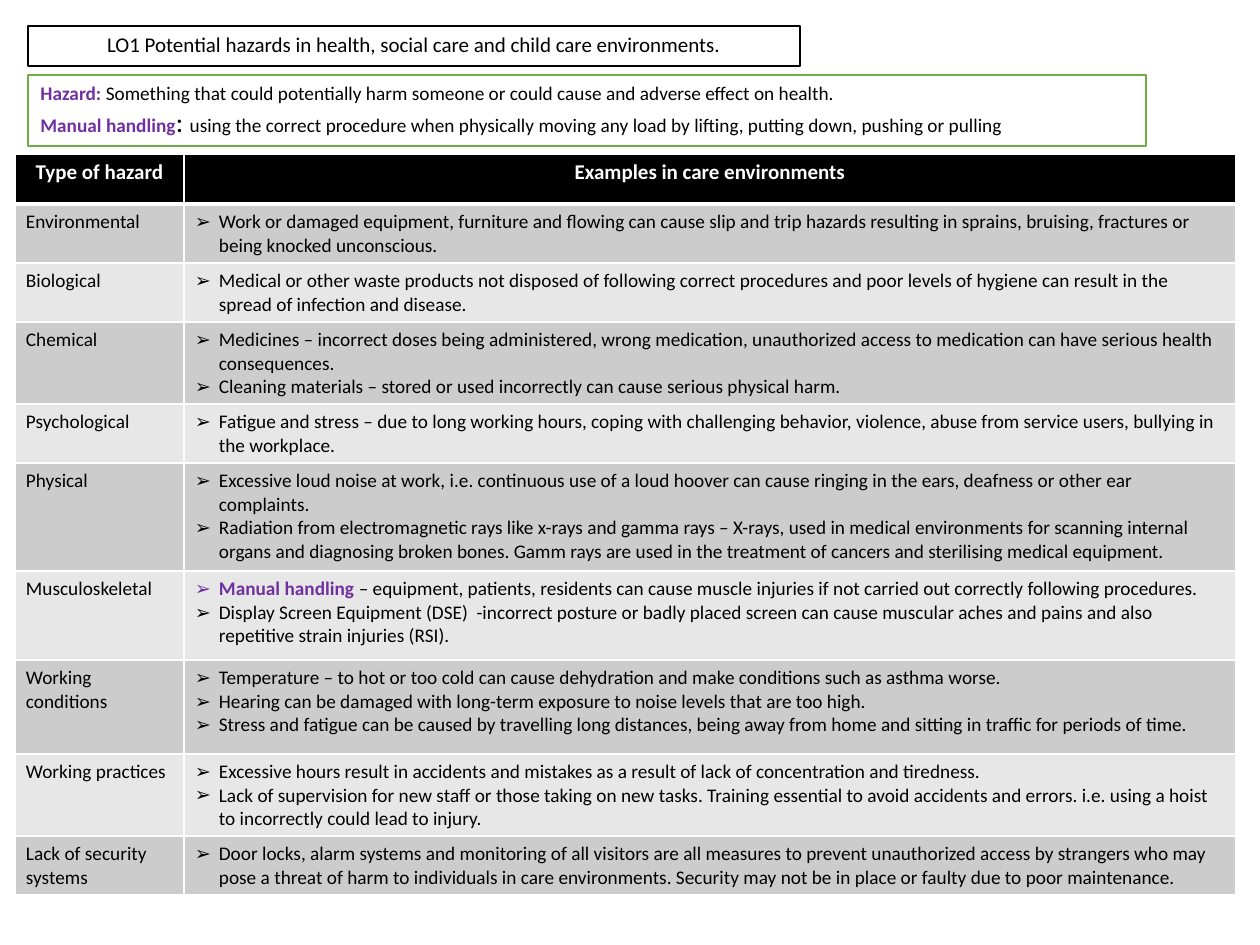
from lxml import etree
from pptx import Presentation
from pptx.dml.color import RGBColor
from pptx.enum.text import MSO_ANCHOR, MSO_AUTO_SIZE, PP_ALIGN
from pptx.oxml.ns import qn
from pptx.util import Pt

CENTER, LEFT = PP_ALIGN.CENTER, PP_ALIGN.LEFT
MIDDLE = MSO_ANCHOR.MIDDLE
NO_FIT, GROW = MSO_AUTO_SIZE.NONE, MSO_AUTO_SIZE.SHAPE_TO_FIT_TEXT

PX = 914400 / 126
FONT = "Calibri"
COLORS = {"black": "000000", "white": "FFFFFF", "purple": "7030A0",
          "green": "70AD47", "dark": "CCCCCC", "light": "E7E7E7"}

# Content: a paragraph is a list of (text, format) runs
BODY = {"size": 11, "color": "black", "bold": False}
KEY = {"size": 11, "color": "purple", "bold": True}
COLON = {**BODY, "size": 16}
TITLE = {**BODY, "size": 12}
HEAD = {"size": 12, "color": "white", "bold": True}

TITLE_TEXT = "LO1 Potential hazards in health, social care and child care environments."
DEFINITIONS = [
    [("Hazard: ", KEY),
     ("Something that could potentially harm someone or could cause and adverse effect on health.", BODY)],
    [("Manual handling", KEY), (": ", COLON),
     ("using the correct procedure when physically moving any load by lifting, putting down, pushing or pulling", BODY)],
]
HEADERS = ["Type of hazard", "Examples in care environments"]
# Hazard, row height, examples
HAZARDS = [
    ("Environmental", 59, [
        "Work or damaged equipment, furniture and flowing can cause slip and trip hazards resulting in sprains, bruising, fractures or being knocked unconscious."]),
    ("Biological", 59, [
        "Medical or other waste products not disposed of following correct procedures and poor levels of hygiene can result in the spread of infection and disease."]),
    ("Chemical", 82, [
        "Medicines – incorrect doses being administered, wrong medication, unauthorized access to medication can have serious health consequences.",
        "Cleaning materials – stored or used incorrectly can cause serious physical harm."]),
    ("Psychological", 59, [
        "Fatigue and stress – due to long working hours, coping with challenging behavior, violence, abuse from service users, bullying in the workplace."]),
    ("Physical", 108, [
        "Excessive loud noise at work, i.e. continuous use of a loud hoover can cause ringing in the ears, deafness or other ear complaints.",
        "Radiation from electromagnetic rays like x-rays and gamma rays – X-rays, used in medical environments for scanning internal organs and diagnosing broken bones. Gamm rays are used in the treatment of cancers and sterilising medical equipment."]),
    ("Musculoskeletal", 89, [
        [("Manual handling ", KEY),
         ("– equipment, patients, residents can cause muscle injuries if not carried out correctly following procedures.", BODY)],
        "Display Screen Equipment (DSE)  -incorrect posture or badly placed screen can cause muscular aches and pains and also repetitive strain injuries (RSI)."]),
    ("Working conditions", 94, [
        "Temperature – to hot or too cold can cause dehydration and make conditions such as asthma worse.",
        "Hearing can be damaged with long-term exposure to noise levels that are too high.",
        "Stress and fatigue can be caused by travelling long distances, being away from home and sitting in traffic for periods of time."]),
    ("Working practices", 82, [
        "Excessive hours result in accidents and mistakes as a result of lack of concentration and tiredness.",
        "Lack of supervision for new staff or those taking on new tasks. Training essential to avoid accidents and errors. i.e. using a hoist to incorrectly could lead to injury."]),
    ("Lack of security systems", 59, [
        "Door locks, alarm systems and monitoring of all visitors are all measures to prevent unauthorized access by strangers who may pose a threat of harm to individuals in care environments. Security may not be in place or faulty due to poor maintenance."]),
]

# Layout in px
TITLE_BOX = (28, 26, 772, 40)
DEFINITION_BOX = (28, 75, 1118, 71)
TABLE_AT = (15, 154)
COLS = (169, 1052)
HEADER_H = 50
INDENT = 24
MARGINS = {"margin_left": 11, "margin_right": 11, "margin_top": 6, "margin_bottom": 6}


def px(n):
    return round(n * PX)


def rgb(name):
    return RGBColor.from_string(COLORS[name])


def write(tf, paragraphs, align=LEFT, bullet=False):
    for i, runs in enumerate(paragraphs):
        p = tf.paragraphs[0] if i == 0 else tf.add_paragraph()
        p.alignment = align
        for text, fmt in runs:
            r = p.add_run()
            r.text = text
            values = {"name": FONT, "size": Pt(fmt["size"]), "bold": fmt["bold"]}
            for key, value in values.items():
                setattr(r.font, key, value)
            r.font.color.rgb = rgb(fmt["color"])
        if bullet:
            pPr = p._p.get_or_add_pPr()
            pPr.set("marL", str(px(INDENT)))
            pPr.set("indent", str(-px(INDENT)))
            etree.SubElement(pPr, qn("a:buFont"), typeface="Arial")
            etree.SubElement(pPr, qn("a:buChar"), char="➢")


def frame(sp, box, line):
    sp.left, sp.top, sp.width, sp.height = map(px, box)
    sp.fill.solid()
    sp.fill.fore_color.rgb = rgb("white")
    sp.line.color.rgb = rgb(line)
    sp.line.width = Pt(1)


def style_cell(cell, fill, widths):
    for key, value in MARGINS.items():
        setattr(cell, key, px(value))
    tcPr = cell._tc.get_or_add_tcPr()
    for side, width in zip("LRTB", widths):
        ln = etree.SubElement(tcPr, qn("a:ln" + side), w=str(Pt(width)))
        solid = etree.SubElement(ln, qn("a:solidFill"))
        etree.SubElement(solid, qn("a:srgbClr"), val=COLORS["white"])
    cell.fill.solid()
    cell.fill.fore_color.rgb = rgb(fill)


def main():
    prs = Presentation()
    prs.slide_width, prs.slide_height = px(1260), px(945)
    slide = prs.slides.add_slide(prs.slide_layouts[5])

    # Title
    title = slide.shapes.title
    frame(title, TITLE_BOX, "black")
    tf = title.text_frame
    tf.auto_size, tf.vertical_anchor, tf.word_wrap = NO_FIT, MIDDLE, True
    write(tf, [[(TITLE_TEXT, TITLE)]], CENTER)
    tf.paragraphs[0].line_spacing = 0.9

    # Definitions
    box = slide.shapes.add_textbox(*map(px, DEFINITION_BOX))
    frame(box, DEFINITION_BOX, "green")
    tf = box.text_frame
    tf.word_wrap, tf.auto_size = True, GROW
    write(tf, DEFINITIONS)

    # Hazard table
    heights = [HEADER_H] + [h for _, h, _ in HAZARDS]
    size = (sum(COLS), sum(heights))
    table = slide.shapes.add_table(len(heights), len(COLS), *map(px, TABLE_AT + size)).table
    for col, width in zip(table.columns, COLS):
        col.width = px(width)
    for row, height in zip(table.rows, heights):
        row.height = px(height)

    for c, text in enumerate(HEADERS):
        cell = table.cell(0, c)
        style_cell(cell, "black", (1, 1, 1, 3))
        write(cell.text_frame, [[(text, HEAD)]], CENTER)

    for i, (hazard, _, examples) in enumerate(HAZARDS, 1):
        name, detail = table.cell(i, 0), table.cell(i, 1)
        for cell in (name, detail):
            style_cell(cell, "dark" if i % 2 else "light", (1, 1, 3 if i == 1 else 1, 1))
        write(name.text_frame, [[(hazard, BODY)]])
        write(detail.text_frame,
              [[(e, BODY)] if isinstance(e, str) else e for e in examples], bullet=True)

    prs.save("out.pptx")


if __name__ == "__main__":
    main()
